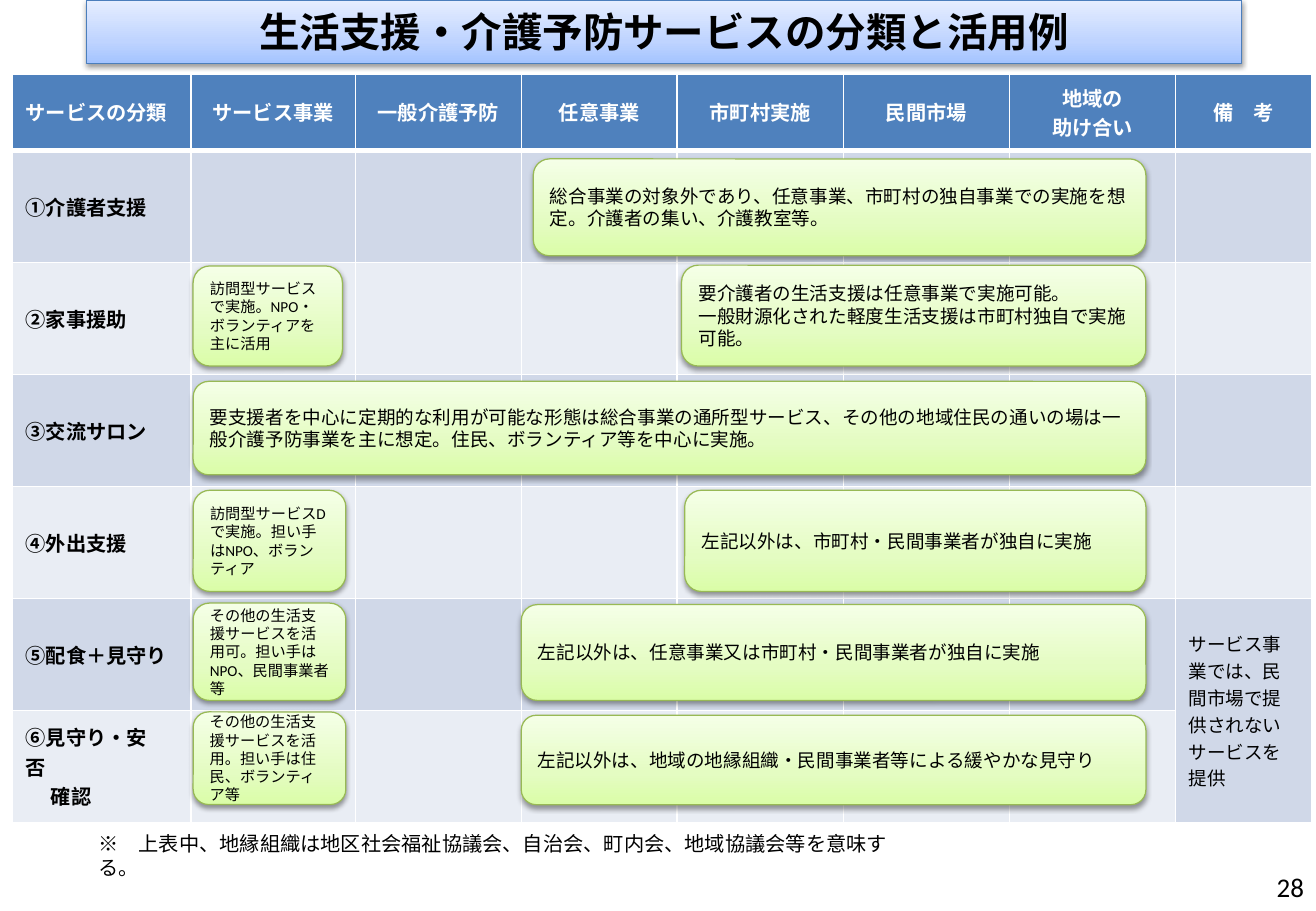
from lxml import etree
from pptx import Presentation
from pptx.dml.color import RGBColor
from pptx.enum.shapes import MSO_SHAPE
from pptx.enum.text import MSO_ANCHOR, MSO_AUTO_SIZE, PP_ALIGN
from pptx.oxml import parse_xml
from pptx.oxml.ns import nsdecls, qn
from pptx.util import Pt

COLORS = {
    "text": "000000", "white": "FFFFFF", "header": "4F81BD",
    "odd": "D0D8E8", "even": "E9EDF4",
    "blue_line": "4B7EBC", "green_line": "98B955",
}
BLUE_STOPS = {0: "A4C4FF", 35: "BFD4FF", 100: "E6EEFF"}
GREEN_STOPS = {0: "DAFDA7", 35: "E4FCC2", 100: "F5FFE7"}


def write(frame, lines, size, font, color="text", bold=False, align=PP_ALIGN.LEFT):
    for index, line in enumerate(lines):
        para = frame.paragraphs[0] if index == 0 else frame.add_paragraph()
        para.alignment = align
        span = para.add_run()
        span.text = line
        span.font.size = Pt(size)
        span.font.name = font
        span.font.bold = bold
        span.font.color.rgb = RGBColor.from_string(COLORS[color])


def style_panel(panel, stops, line):
    panel.line.color.rgb = RGBColor.from_string(COLORS[line])
    panel.line.width = Pt(0.75)
    stop_xml = "".join(
        f'<a:gs pos="{place * 1000}"><a:srgbClr val="{color}"/></a:gs>'
        for place, color in stops.items())
    properties = panel._element.spPr
    properties.find(qn("a:ln")).addprevious(parse_xml(
        f'<a:gradFill {nsdecls("a")} rotWithShape="1"><a:gsLst>{stop_xml}</a:gsLst>'
        '<a:lin ang="16200000" scaled="0"/></a:gradFill>'))
    properties.append(parse_xml(
        f'<a:effectLst {nsdecls("a")}><a:outerShdw blurRad="39370" dist="20320" '
        'dir="5400000" rotWithShape="0"><a:srgbClr val="000000">'
        '<a:alpha val="38000"/></a:srgbClr></a:outerShdw></a:effectLst>'))
    panel.text_frame.word_wrap = True
    panel.text_frame.auto_size = MSO_AUTO_SIZE.NONE
    panel.text_frame.vertical_anchor = MSO_ANCHOR.MIDDLE


deck = Presentation()
deck.slide_width, deck.slide_height = Pt(780), Pt(540)
page = deck.slides.add_slide(deck.slide_layouts[5])

# Title banner
title = page.shapes.title
title.left, title.top, title.width, title.height = Pt(51.2), Pt(0), Pt(684.7), Pt(37.5)
title._element.spPr.append(parse_xml(
    f'<a:prstGeom {nsdecls("a")} prst="roundRect"><a:avLst/></a:prstGeom>'))
style_panel(title, BLUE_STOPS, "blue_line")
write(title.text_frame, ["生活支援・介護予防サービスの分類と活用例"], 24, "Arial",
      bold=True, align=PP_ALIGN.CENTER)

# Service table
headers = ["サービスの分類", "サービス事業", "一般介護予防", "任意事業",
           "市町村実施", "民間市場", "地域の\n助け合い", "備　考"]
services = ["①介護者支援", "②家事援助", "③交流サロン", "④外出支援",
            "⑤配食＋見守り", "⑥見守り・安否\n確認"]
widths = [105.6, 97.5, 98.5, 92.3, 98.5, 98.5, 98.5, 80.9]
heights = [45.4] + [66.4] * 6
table = page.shapes.add_table(7, 8, Pt(7.5), Pt(43.8), Pt(sum(widths)),
                              Pt(sum(heights))).table
for column, width in zip(table.columns, widths):
    column.width = Pt(width)
for row, height in zip(table.rows, heights):
    row.height = Pt(height)

for r in range(7):
    for c in range(8):
        cell = table.cell(r, c)
        cell.vertical_anchor = MSO_ANCHOR.MIDDLE
        cell.margin_left = cell.margin_right = Pt(7.7)
        cell.margin_top = cell.margin_bottom = Pt(3.6)
        for side in ("lnL", "lnR", "lnT", "lnB"):
            thick = (r == 0 and side == "lnB") or (r == 1 and side == "lnT")
            border = etree.SubElement(cell._tc.get_or_add_tcPr(), qn(f"a:{side}"),
                                      w=str(Pt(3 if thick else 1)))
            solid = etree.SubElement(border, qn("a:solidFill"))
            etree.SubElement(solid, qn("a:srgbClr"), val=COLORS["white"])
        band = "header" if r == 0 else "odd" if r % 2 else "even"
        cell.fill.solid()
        cell.fill.fore_color.rgb = RGBColor.from_string(COLORS[band])
        if r == 0:
            write(cell.text_frame, headers[c].split("\n"), 12, "Arial", "white", True,
                  PP_ALIGN.CENTER if c else PP_ALIGN.LEFT)
        elif c == 0:
            write(cell.text_frame, services[r - 1].split("\n"), 12, "Arial", bold=True)

# Last service: narrower text and an indented second line
last_service = table.cell(6, 0)
last_service.margin_right = Pt(20)
last_service.text_frame.paragraphs[1]._p.get_or_add_pPr().set("marL", str(Pt(15)))

# Remark across the last two rows
remark = table.cell(5, 7)
remark.merge(table.cell(6, 7))
write(remark.text_frame, ["サービス事業では、民間市場で提供されないサービスを提供"], 11, "Calibri")

# Green cards: left, top, right, bottom, text size, lines
narrow, wide, edge = 114.5, 309, 679.2
cards = [
    (316.1, 94.2, edge, 151.6, 11,
     ["総合事業の対象外であり、任意事業、市町村の独自事業での実施を想定。介護者の集い、介護教室等。"]),
    (404, 157.2, edge, 217, 11,
     ["要介護者の生活支援は任意事業で実施可能。",
      "一般財源化された軽度生活支援は市町村独自で実施可能。"]),
    (narrow, 157.7, 203, 217, 9, ["訪問型サービスで実施。NPO・ボランティアを主に活用"]),
    (narrow, 226.1, edge, 281.5, 11,
     ["要支援者を中心に定期的な利用が可能な形態は総合事業の通所型サービス、"
      "その他の地域住民の通いの場は一般介護予防事業を主に想定。住民、ボランティア等を中心に実施。"]),
    (narrow, 290.6, 205, 350.6, 9, ["訪問型サービスDで実施。担い手はNPO、ボランティア"]),
    (405.8, 290.6, edge, 350.6, 11, ["左記以外は、市町村・民間事業者が独自に実施"]),
    (narrow, 357.5, 205, 415.2, 9, ["その他の生活支援サービスを活用可。担い手はNPO、民間事業者等"]),
    (wide, 358.4, edge, 415.2, 11, ["左記以外は、任意事業又は市町村・民間事業者が独自に実施"]),
    (narrow, 422, 205, 476.9, 9, ["その他の生活支援サービスを活用。担い手は住民、ボランティア等"]),
    (wide, 424, edge, 477, 11, ["左記以外は、地域の地縁組織・民間事業者等による緩やかな見守り"]),
]
for left, top, right, bottom, size, lines in cards:
    card = page.shapes.add_shape(MSO_SHAPE.ROUNDED_RECTANGLE, Pt(left), Pt(top),
                                 Pt(right - left), Pt(bottom - top))
    style_panel(card, GREEN_STOPS, "green_line")
    write(card.text_frame, lines, size, "Calibri")

# Footnote and page number
footnote = page.shapes.add_textbox(Pt(51.2), Pt(489), Pt(491.8), Pt(21.8))
footnote.text_frame.word_wrap = True
write(footnote.text_frame,
      ["※　上表中、地縁組織は地区社会福祉協議会、自治会、町内会、地域協議会等を意味する。"],
      12, "Calibri")
number = page.shapes.add_textbox(Pt(736), Pt(511.2), Pt(44), Pt(28.8))
number.text_frame.vertical_anchor = MSO_ANCHOR.MIDDLE
write(number.text_frame, ["28"], 16, "Calibri", align=PP_ALIGN.RIGHT)

deck.save("out.pptx")
